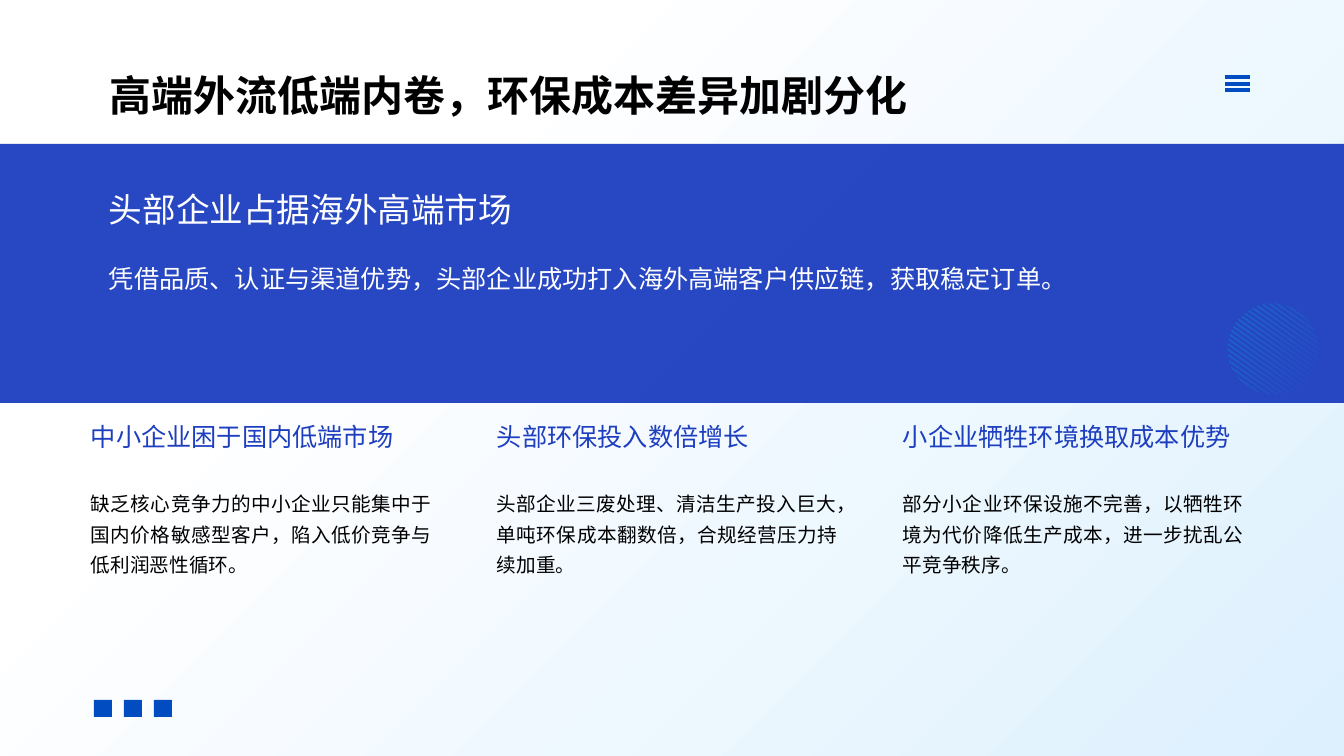
"""Build the slide on high-end outflow and low-end competition."""
from math import sqrt

from lxml import etree
from pptx import Presentation
from pptx.dml.color import RGBColor
from pptx.enum.shapes import MSO_CONNECTOR, MSO_SHAPE
from pptx.enum.text import MSO_ANCHOR, MSO_AUTO_SIZE, PP_ALIGN
from pptx.oxml.ns import qn
from pptx.util import Emu, Pt

TITLE = "高端外流低端内卷，环保成本差异加剧分化"
LEAD_HEADING = "头部企业占据海外高端市场"
LEAD_BODY = "凭借品质、认证与渠道优势，头部企业成功打入海外高端客户供应链，获取稳定订单。"
COLUMNS = [
    ("中小企业困于国内低端市场",
     "缺乏核心竞争力的中小企业只能集中于国内价格敏感型客户，陷入低价竞争与低利润恶性循环。"),
    ("头部环保投入数倍增长",
     "头部企业三废处理、清洁生产投入巨大，单吨环保成本翻数倍，合规经营压力持续加重。"),
    ("小企业牺牲环境换取成本优势",
     "部分小企业环保设施不完善，以牺牲环境为代价降低生产成本，进一步扰乱公平竞争秩序。"),
]

BLACK = RGBColor(0x00, 0x00, 0x00)
WHITE = RGBColor(0xFF, 0xFF, 0xFF)
ROYAL = RGBColor(0x1D, 0x3E, 0xBF)
ACCENT = RGBColor(0x00, 0x4C, 0xC0)
SKY = RGBColor(0x00, 0xB0, 0xF0)
PALE = RGBColor(0xDD, 0xF0, 0xFE)
FONT = "Karla"
BACKGROUND_STOPS = [(0, WHITE, 100), (28, WHITE, 100), (100, PALE, 100)]
DISC_STOPS = [(0, SKY, 34), (76, SKY, 3), (100, SKY, 3)]

SCALE = 914400 / 100.8
COLUMN_LEFT, COLUMN_PITCH, COLUMN_WIDTH = 81, 406, 360
SQUARE_LEFT, SQUARE_PITCH = 94, 30
MENU_LINES = (77, 84, 90)
DISC_X, DISC_Y, DISC_DIAMETER, STRIPES = 1273, 349, 91, 21


def px(length):
    return Emu(round(length * SCALE))


def set_alpha(color_element, percent):
    etree.SubElement(color_element, qn("a:alpha"), val=str(percent * 1000))


def set_gradient(fill, element, stops, angle):
    fill.gradient()
    fill.gradient_angle = -angle % 360
    stop_list = next(element.iter(qn("a:gsLst")))
    for stop in list(stop_list):
        stop_list.remove(stop)
    for position, color, alpha in stops:
        stop = etree.SubElement(stop_list, qn("a:gs"), pos=str(position * 1000))
        color_element = etree.SubElement(stop, qn("a:srgbClr"), val=str(color))
        if alpha < 100:
            set_alpha(color_element, alpha)


def add_rectangle(slide, left, top, width, height, color):
    shape = slide.shapes.add_shape(MSO_SHAPE.RECTANGLE, px(left), px(top), px(width), px(height))
    shape.shadow.inherit = False
    shape.fill.solid()
    shape.fill.fore_color.rgb = color
    shape.line.fill.background()
    return shape


def add_text(slide, text, box, *, size, color, bold=None, align=PP_ALIGN.JUSTIFY,
             anchor=MSO_ANCHOR.TOP, spacing=None):
    frame = slide.shapes.add_textbox(*map(px, box)).text_frame
    frame.word_wrap = True
    frame.auto_size = MSO_AUTO_SIZE.SHAPE_TO_FIT_TEXT
    frame.vertical_anchor = anchor
    paragraph = frame.paragraphs[0]
    paragraph.alignment = align
    paragraph.line_spacing = spacing
    run = paragraph.add_run()
    run.text = text
    run.font.size = Pt(size)
    run.font.bold = bold
    run.font.color.rgb = color
    run.font.name = FONT
    etree.SubElement(run.font.element if hasattr(run.font, "element")
                     else next(paragraph.runs[0].font.fill and frame.paragraphs[0].runs[0]._r.iter(qn("a:rPr"))),
                     qn("a:ea"), typeface=FONT)


def add_striped_disc(slide):
    radius = DISC_DIAMETER / 2
    pitch = DISC_DIAMETER / STRIPES
    half_stripe = pitch * 0.28
    builder = None
    for index in range(STRIPES):
        middle = (index - STRIPES // 2) * pitch
        top, bottom = middle - half_stripe, middle + half_stripe
        upper, lower = (sqrt(radius ** 2 - edge ** 2) for edge in (top, bottom))
        corners = [(px(DISC_X + x), px(DISC_Y + y)) for x, y in
                   ((-upper, top), (upper, top), (lower, bottom), (-lower, bottom))]
        if builder is None:
            builder = slide.shapes.build_freeform(*corners[0])
        else:
            builder.move_to(*corners[0])
        builder.add_line_segments(corners[1:], close=True)
    disc = builder.convert_to_shape()
    disc.shadow.inherit = False
    disc.line.fill.background()
    disc.rotation = 35
    set_gradient(disc.fill, disc.element, DISC_STOPS, 0)


def add_menu_line(slide, y):
    line = slide.shapes.add_connector(MSO_CONNECTOR.STRAIGHT, px(1225), px(y), px(1250), px(y))
    line.line.color.rgb = ACCENT
    line.line.width = Pt(2.5)
    etree.SubElement(line.element.spPr, qn("a:effectLst"))


def main():
    presentation = Presentation()
    presentation.slide_width, presentation.slide_height = px(1344), px(756)
    slide = presentation.slides.add_slide(presentation.slide_layouts[6])
    set_gradient(slide.background.fill, slide.element, BACKGROUND_STOPS, 45)

    band = add_rectangle(slide, -1, 144, 1347, 259, ROYAL)
    set_alpha(next(band.element.spPr.iter(qn("a:srgbClr"))), 95)
    for index in range(3):
        add_rectangle(slide, SQUARE_LEFT + index * SQUARE_PITCH, 700, 18, 17, ACCENT)
    add_striped_disc(slide)

    add_text(slide, TITLE, (100, 65, 1119, 60), size=30, color=BLACK, bold=True,
             align=PP_ALIGN.LEFT)
    for y in MENU_LINES:
        add_menu_line(slide, y)
    add_text(slide, LEAD_HEADING, (99, 184, 1136, 51), size=24, color=WHITE,
             anchor=MSO_ANCHOR.MIDDLE)
    add_text(slide, LEAD_BODY, (99, 249, 1138, 49), size=18, color=WHITE, spacing=1.3)
    for index, (heading, body) in enumerate(COLUMNS):
        left = COLUMN_LEFT + index * COLUMN_PITCH
        add_text(slide, heading, (left, 416, COLUMN_WIDTH, 40), size=18, color=ROYAL,
                 anchor=MSO_ANCHOR.MIDDLE)
        add_text(slide, body, (left, 480, COLUMN_WIDTH, 106), size=14, color=BLACK, spacing=1.3)

    presentation.save("out.pptx")


if __name__ == "__main__":
    main()
